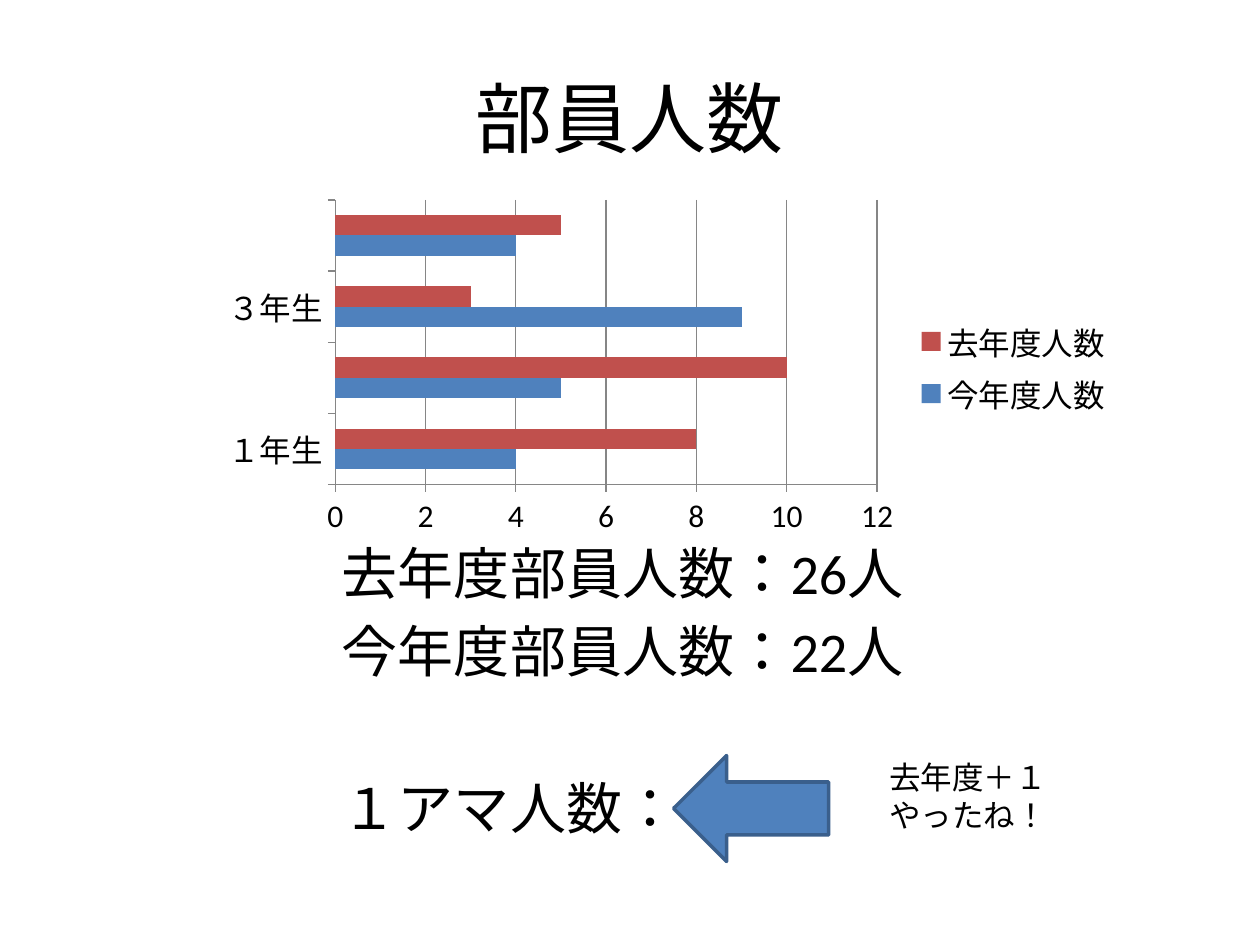
from pptx import Presentation
from pptx.chart.data import CategoryChartData
from pptx.dml.color import RGBColor
from pptx.enum.chart import XL_CHART_TYPE as Kind, XL_LEGEND_POSITION as Spot, XL_TICK_MARK as Tick
from pptx.enum.lang import MSO_LANGUAGE_ID as Lang
from pptx.enum.shapes import MSO_SHAPE as Form
from pptx.enum.text import MSO_ANCHOR as Anchor, PP_ALIGN as Align
from pptx.util import Emu, Pt

BLACK = RGBColor(0x00, 0x00, 0x00)
BLUE = RGBColor(0x4F, 0x81, 0xBD)
RED = RGBColor(0xC0, 0x50, 0x4D)
EDGE = RGBColor(0x3A, 0x5F, 0x8C)
GRAY = RGBColor(0x86, 0x86, 0x86)


def px(n):
    return Emu(n * 914400 // 126)


def put(item, **vals):
    for key, val in vals.items():
        setattr(item, key, val)


class Deck:
    face = "Calibri"

    def __init__(self, wide, high):
        self.file = Presentation()
        put(self.file, slide_width=px(wide), slide_height=px(high))
        self.slide = self.file.slides.add_slide(self.file.slide_layouts[6])

    def font(self, font, size):
        put(font, name=self.face, size=Pt(size), language_id=Lang.JAPANESE)
        font.color.rgb = BLACK

    def text(self, box, lines, size, gaps=(0,), align=Align.LEFT, **frame):
        body = self.slide.shapes.add_textbox(*map(px, box)).text_frame
        put(body, word_wrap=True, **frame)
        for i, (line, gap) in enumerate(zip(lines, gaps)):
            para = body.add_paragraph() if i else body.paragraphs[0]
            put(para, alignment=align, space_before=Pt(gap))
            run = para.add_run()
            run.text = line
            self.font(run.font, size)

    def arrow(self, box, turn):
        shape = self.slide.shapes.add_shape(Form.DOWN_ARROW, *map(px, box))
        shape.rotation = turn
        shape.shadow.inherit = False
        shape.fill.solid()
        shape.fill.fore_color.rgb = BLUE
        shape.line.color.rgb = EDGE
        shape.line.width = Pt(2)

    def bars(self, box, cats, rows, size):
        data = CategoryChartData()
        data.categories = cats
        for name, vals, _ in rows:
            data.add_series(name, vals)
        frame = self.slide.shapes.add_chart(Kind.BAR_CLUSTERED, *map(px, box), data)
        chart = frame.chart
        put(chart, has_title=False, has_legend=True)
        self.font(chart.font, size)
        put(chart.legend, position=Spot.RIGHT, include_in_layout=False)
        plot = chart.plots[0]
        put(plot, gap_width=150, vary_by_categories=False)
        for row, (_, _, tint) in zip(plot.series, rows):
            row.format.fill.solid()
            row.format.fill.fore_color.rgb = tint
        cat, val = chart.category_axis, chart.value_axis
        put(val, has_major_gridlines=True)
        for axis in (cat, val):
            put(axis, major_tick_mark=Tick.OUTSIDE, minor_tick_mark=Tick.NONE)
        for part in (cat, val, val.major_gridlines):
            part.format.line.color.rgb = GRAY
            part.format.line.width = Pt(0.75)


def main():
    deck = Deck(1260, 945)
    deck.text((63, 38, 1134, 158), ["部員人数"], 44, align=Align.CENTER,
              vertical_anchor=Anchor.MIDDLE)
    deck.text((105, 532, 1134, 357),
              ["去年度部員人数：26人", "今年度部員人数：22人", "１アマ人数："],
              32, gaps=(6.4, 6.4, 51), margin_left=px(237))
    deck.bars((210, 193, 916, 349),
              ["１年生", "", "３年生", ""],
              [("今年度人数", (4, 5, 9, 4), BLUE),
               ("去年度人数", (8, 10, 3, 5), RED)], 18)
    deck.arrow((698, 731, 106, 155), 90)
    deck.text((877, 752, 238, 89), ["去年度＋１　やったね！"], 18)
    deck.file.save("out.pptx")


if __name__ == "__main__":
    main()
